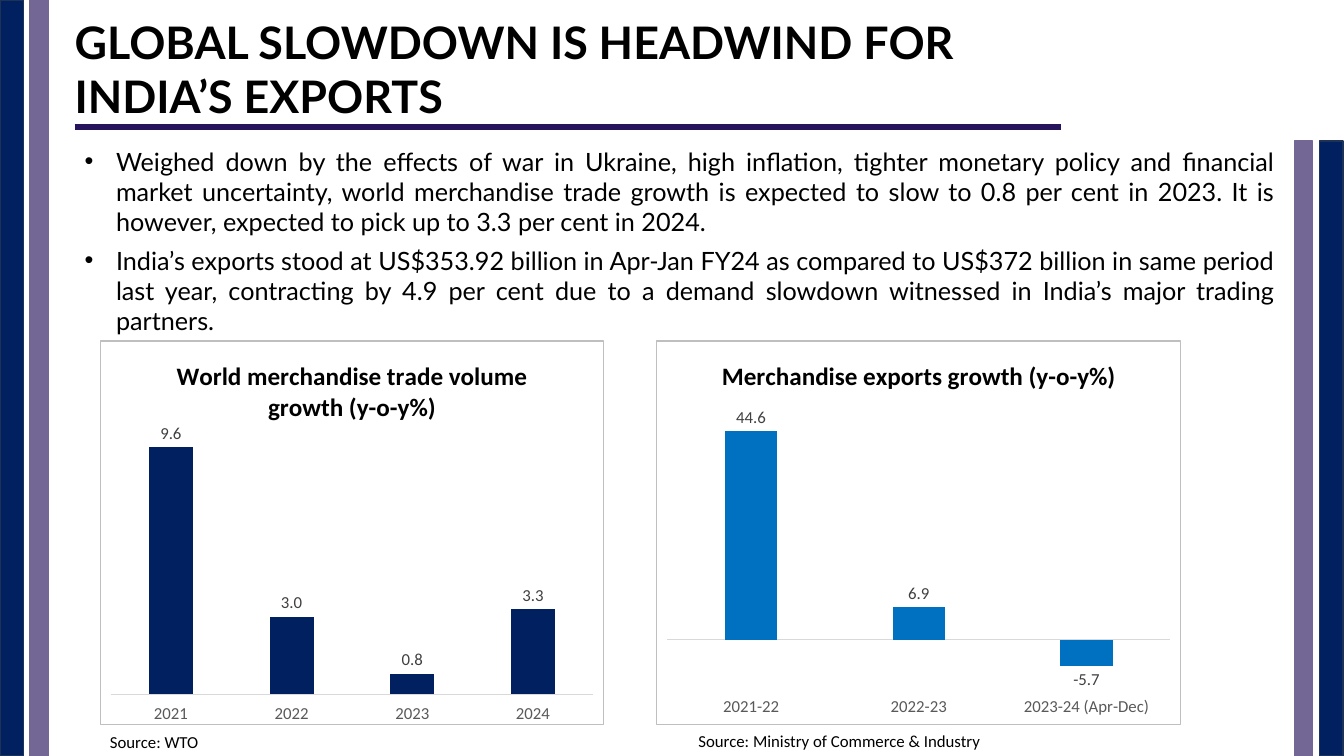
from lxml import etree
from pptx import Presentation
from pptx.chart.data import CategoryChartData
from pptx.dml.color import RGBColor
from pptx.enum.chart import XL_CHART_TYPE as ChartType, XL_LABEL_POSITION as LabelPos
from pptx.enum.chart import XL_TICK_LABEL_POSITION as TickLabels, XL_TICK_MARK as TickMark
from pptx.enum.shapes import MSO_CONNECTOR as Connector, MSO_SHAPE as Shape
from pptx.enum.text import MSO_ANCHOR as Anchor, MSO_AUTO_SIZE as AutoSize, PP_ALIGN as Align
from pptx.oxml import parse_xml
from pptx.oxml.ns import nsdecls, qn
from pptx.util import Cm, Pt

COLORS = {
    "black": "000000", "navy": "002060", "navy_edge": "1E3256", "mauve": "736796",
    "indigo": "26145D", "blue": "0070C0", "axis_text": "595959", "label": "404040",
    "axis": "D9D9D9", "border": "BFBFBF",
}


def rgb(name):
    return RGBColor.from_string(COLORS[name])


def assign(target, **values):
    for key, value in values.items():
        setattr(target, key, value)


def set_font(font, name, size, color="black", bold=False):
    assign(font, name=name, size=Pt(size), bold=bold)
    font.color.rgb = rgb(color)


def place(shape, left, top, width, height):
    assign(shape, left=Cm(left), top=Cm(top), width=Cm(width), height=Cm(height))


class SlideBuilder:
    heading_font = "Lato"
    chart_font = "Calibri"

    def __init__(self, slide):
        self.slide = slide
        self.shapes = slide.shapes

    def title(self, text, box):
        title = self.shapes.title
        place(title, *box)
        frame = title.text_frame
        frame.text = text
        assign(frame, margin_left=0, margin_right=0, margin_top=0, margin_bottom=0,
               vertical_anchor=Anchor.MIDDLE, auto_size=AutoSize.NONE, word_wrap=True)
        paragraph = frame.paragraphs[0]
        paragraph.alignment = Align.LEFT
        set_font(paragraph.runs[0].font, self.heading_font, 32, bold=True)

    def bullets(self, items, box):
        body = self.slide.placeholders[1]
        place(body, *box)
        frame = body.text_frame
        frame.text = "\n".join(items)
        assign(frame, vertical_anchor=Anchor.TOP, auto_size=AutoSize.NONE, word_wrap=True)
        for paragraph in frame.paragraphs:
            props = paragraph._p.get_or_add_pPr()
            props.set("marL", str(Cm(0.79)))
            props.set("indent", str(-Cm(0.79)))
            etree.SubElement(props, qn("a:buFont")).set("typeface", "Arial")
            etree.SubElement(props, qn("a:buChar")).set("char", "•")
            assign(paragraph, alignment=Align.JUSTIFY, space_before=Pt(0), space_after=Pt(6))
            set_font(paragraph.runs[0].font, self.heading_font, 18)

    def bar(self, box, fill, edge):
        bar = self.shapes.add_shape(Shape.RECTANGLE, *map(Cm, box))
        bar.shadow.inherit = False
        bar.fill.solid()
        bar.fill.fore_color.rgb = rgb(fill)
        bar.line.color.rgb = rgb(edge)
        bar.line.width = Pt(1)

    def rule(self, left, right, y):
        rule = self.shapes.add_connector(Connector.STRAIGHT, Cm(left), Cm(y), Cm(right), Cm(y))
        rule.line.color.rgb = rgb("indigo")
        rule.line.width = Pt(4.5)
        etree.SubElement(rule._element.spPr, qn("a:effectLst"))

    def source(self, text, box):
        frame = self.shapes.add_textbox(*map(Cm, box)).text_frame
        frame.word_wrap = True
        frame.text = text
        set_font(frame.paragraphs[0].runs[0].font, self.chart_font, 12)

    def column_chart(self, title, box, values, color, gap, scale, plot_area):
        """Add a chart; values maps category to value, plot_area is the inner plot's top and height."""
        data = CategoryChartData(number_format="0.0")
        data.categories = list(values)
        data.add_series("Series 1", list(values.values()))
        chart = self.shapes.add_chart(ChartType.COLUMN_CLUSTERED, *map(Cm, box), data).chart
        set_font(chart.font, self.chart_font, 12)
        chart.has_legend = False

        chart.has_title = True
        heading = chart.chart_title
        heading.include_in_layout = False
        heading.text_frame.text = title
        set_font(heading.text_frame.paragraphs[0].runs[0].font, self.chart_font, 18, bold=True)

        categories, amounts = chart.category_axis, chart.value_axis
        assign(categories, major_tick_mark=TickMark.NONE, minor_tick_mark=TickMark.NONE,
               tick_label_position=TickLabels.LOW)
        set_font(categories.tick_labels.font, self.chart_font, 12, "axis_text")
        categories.format.line.color.rgb = rgb("axis")
        categories.format.line.width = Pt(0.75)
        assign(amounts, visible=False, has_major_gridlines=False,
               minimum_scale=scale[0], maximum_scale=scale[1])

        plot = chart.plots[0]
        assign(plot, gap_width=gap, overlap=-27, vary_by_categories=False, has_data_labels=True)
        assign(plot.data_labels, show_value=True, position=LabelPos.OUTSIDE_END,
               number_format="0.0", number_format_is_linked=False)
        set_font(plot.data_labels.font, self.chart_font, 12, "label")
        series = plot.series[0]
        series.invert_if_negative = False
        series.format.fill.solid()
        series.format.fill.fore_color.rgb = rgb(color)
        self.fix_plot_area(chart, *plot_area)
        self.outline(chart)

    def fix_plot_area(self, chart, top, height):
        area = chart._chartSpace.chart.plotArea
        for layout in area.findall(qn("c:layout")):
            area.remove(layout)
        sizes = {"x": 0.02, "y": top, "w": 0.96, "h": height}
        sizes_xml = "".join(f'<c:{key} val="{value}"/>' for key, value in sizes.items())
        area.insert(0, parse_xml(
            f'<c:layout {nsdecls("c")}><c:manualLayout><c:layoutTarget val="inner"/>'
            f'<c:xMode val="edge"/><c:yMode val="edge"/>{sizes_xml}</c:manualLayout></c:layout>'))

    def outline(self, chart):
        chart._chartSpace.chart.addnext(parse_xml(
            f'<c:spPr {nsdecls("c", "a")}><a:noFill/><a:ln w="{Pt(0.75)}"><a:solidFill>'
            f'<a:srgbClr val="{COLORS["border"]}"/></a:solidFill></a:ln></c:spPr>'))


def main():
    deck = Presentation()
    assign(deck, slide_width=Cm(33.87), slide_height=Cm(19.05))
    page = SlideBuilder(deck.slides.add_slide(deck.slide_layouts[1]))

    for navy_left, mauve_left, top in ((0, 0.76, 0), (33.26, 32.62, 3.55)):
        height = 19.05 - top
        page.bar((navy_left, top, 0.59, height), "navy", "navy_edge")
        page.bar((mauve_left, top, 0.46, height), "mauve", "mauve")

    page.title("GLOBAL SLOWDOWN IS HEADWIND FOR INDIA’S EXPORTS", (1.88, 0.53, 25.22, 2.41))
    page.rule(1.88, 26.75, 3.2)
    page.bullets([
        "Weighed down by the effects of war in Ukraine, high inflation, tighter monetary policy "
        "and financial market uncertainty, world merchandise trade growth is expected to slow to "
        "0.8 per cent in 2023. It is however, expected to pick up to 3.3 per cent in 2024.",
        "India’s exports stood at US$353.92 billion in Apr-Jan FY24 as compared to US$372 billion "
        "in same period last year, contracting by 4.9 per cent due to a demand slowdown witnessed "
        "in India’s major trading partners.",
    ], (1.88, 3.55, 30.5, 6.07))

    page.column_chart(
        "World merchandise trade volume growth (y-o-y%)", (2.52, 8.58, 12.7, 9.7),
        {"2021": 9.6, "2022": 3.0, "2023": 0.8, "2024": 3.3},
        "navy", 174, (0, 10), (0.25, 0.67))
    page.column_chart(
        "Merchandise exports growth (y-o-y%)", (16.54, 8.58, 13.23, 9.7),
        {"2021-22": 44.6, "2022-23": 6.9, "2023-24 (Apr-Dec)": -5.7},
        "blue", 219, (-10, 50), (0.17, 0.73))
    page.source("Source: WTO", (2.52, 18.31, 5.13, 0.76))
    page.source("Source: Ministry of Commerce & Industry", (17.35, 18.29, 8.56, 0.76))
    deck.save("out.pptx")


if __name__ == "__main__":
    main()
